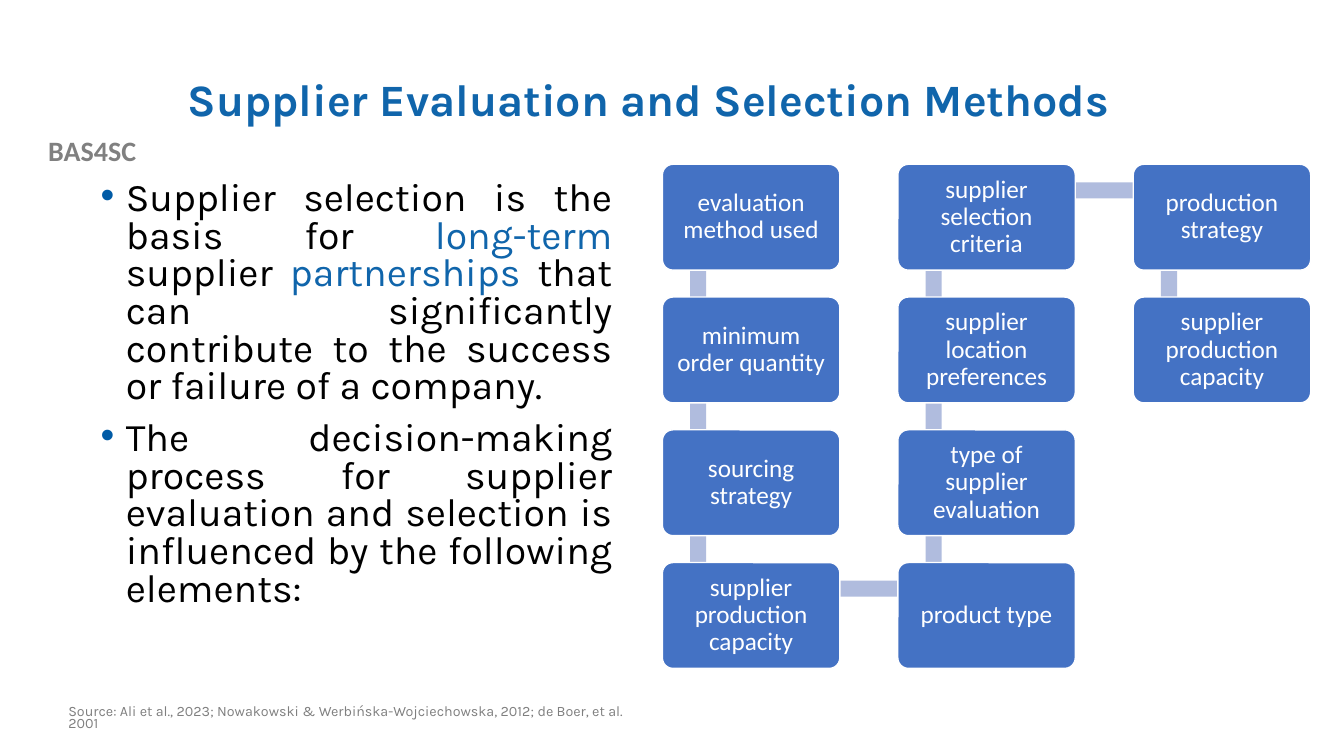
"""Build the supplier evaluation slide with its snaking chain of elements."""
from lxml import etree
from pptx import Presentation
from pptx import util as u
from pptx.dml.color import RGBColor
from pptx.enum import shapes, text
from pptx.oxml.ns import qn

BLUE, BLACK, WHITE, GREY = "1065AB", "000000", "FFFFFF", "808080"
BOX_FILL, BAR_FILL, BULLET = "4472C4", "B0BCDE", "015BA6"
LEFT, TOP, COLUMN, ROW = 6.57, 1.63, 2.335, 1.317
BOX_WIDTH, BOX_HEIGHT, BAR = 1.76, 1.05, 0.16


def color(value):
    return RGBColor.from_string(value)


def style(para, name, size, value, line, align=text.PP_ALIGN.LEFT, bold=False):
    para.alignment, para.line_spacing = align, line
    para.font.name, para.font.size, para.font.bold = name, u.Pt(size), bold
    para.font.color.rgb = color(value)


deck = Presentation()
deck.slide_width, deck.slide_height = u.Inches(13.33), u.Inches(7.5)
page = deck.slides.add_slide(deck.slide_layouts[5])

title = page.shapes.title
title.left, title.top, title.width, title.height = map(u.Inches, (1.76, 0.4, 10.66, 1.22))
title.text_frame.text = "Supplier Evaluation and Selection Methods"
title.text_frame.auto_size = text.MSO_AUTO_SIZE.NONE
title.text_frame.vertical_anchor = text.MSO_ANCHOR.MIDDLE
style(title.text_frame.paragraphs[0], "Karla", 32, BLUE, 0.9, bold=True)

label = page.shapes.add_textbox(*map(u.Inches, (0, 1.28, 1.83, 0.44)))
label.text_frame.word_wrap = True
label.text_frame.text = "BAS4SC"
style(label.text_frame.paragraphs[0], "Calibri", 20, GREY, 1, text.PP_ALIGN.CENTER, True)

points = [
    [("Supplier selection is the basis for ", BLACK), ("long-term", BLUE),
     (" supplier ", BLACK), ("partnerships", BLUE),
     (" that can significantly contribute to the success or failure of a company.", BLACK)],
    [("The decision-making process for supplier evaluation and selection is "
      "influenced by the following elements:", BLACK)],
]
body = page.shapes.add_textbox(*map(u.Inches, (0.9, 1.75, 5.27, 4.76)))
body.text_frame.word_wrap = True
for index, point in enumerate(points):
    para = body.text_frame.add_paragraph() if index else body.text_frame.paragraphs[0]
    props = para._p.get_or_add_pPr()
    props.set("marL", str(u.Inches(0.25)))
    props.set("indent", str(-u.Inches(0.25)))
    bullet_color = etree.SubElement(props, qn("a:buClr"))
    etree.SubElement(bullet_color, qn("a:srgbClr"), val=BULLET)
    etree.SubElement(props, qn("a:buFont"), typeface="Arial")
    etree.SubElement(props, qn("a:buChar"), char="•")
    style(para, "Karla", 28, BLACK, 0.8, text.PP_ALIGN.JUSTIFY)
    para.space_before = u.Pt(10 if index else 0)
    for words, value in point:
        span = para.add_run()
        span.text = words
        span.font.color.rgb = color(value)

source = page.shapes.add_textbox(*map(u.Inches, (0.58, 6.96, 5.9, 0.35)))
source.text_frame.word_wrap = True
source.text_frame.text = ("Source: Ali et al., 2023; Nowakowski & Werbińska-Wojciechowska, "
                          "2012; de Boer, et al. 2001")
style(source.text_frame.paragraphs[0], "Karla", 10.2, "7F7F7F", 0.7)

elements = [
    ("evaluation method used", 0, 0), ("minimum order quantity", 0, 1),
    ("sourcing strategy", 0, 2), ("supplier production capacity", 0, 3),
    ("product type", 1, 3), ("type of supplier evaluation", 1, 2),
    ("supplier location preferences", 1, 1), ("supplier selection criteria", 1, 0),
    ("production strategy", 2, 0), ("supplier production capacity", 2, 1),
]
for (_, column, row), (_, next_column, next_row) in zip(elements, elements[1:]):
    x, y = LEFT + column * COLUMN, TOP + min(row, next_row) * ROW
    if column == next_column:
        place = (x + 0.275, y + 0.26, BAR, ROW)
    else:
        place = (x + 0.36, y + 0.18, COLUMN, BAR)
    bar = page.shapes.add_shape(shapes.MSO_SHAPE.RECTANGLE, *map(u.Inches, place))
    bar.shadow.inherit = False
    bar.fill.solid()
    bar.fill.fore_color.rgb = color(BAR_FILL)
    bar.line.fill.background()

for words, column, row in elements:
    place = (LEFT + column * COLUMN, TOP + row * ROW, BOX_WIDTH, BOX_HEIGHT)
    box = page.shapes.add_shape(shapes.MSO_SHAPE.ROUNDED_RECTANGLE, *map(u.Inches, place))
    box.adjustments[0] = 0.1
    box.shadow.inherit = False
    box.fill.solid()
    box.fill.fore_color.rgb = color(BOX_FILL)
    box.line.color.rgb = color(WHITE)
    box.line.width = u.Pt(1)
    frame = box.text_frame
    frame.margin_left = frame.margin_right = frame.margin_top = frame.margin_bottom = u.Inches(0.07)
    frame.vertical_anchor = text.MSO_ANCHOR.MIDDLE
    frame.word_wrap = True
    frame.text = words
    style(frame.paragraphs[0], "Calibri", 18, WHITE, 0.9, text.PP_ALIGN.CENTER)

deck.save("out.pptx")
